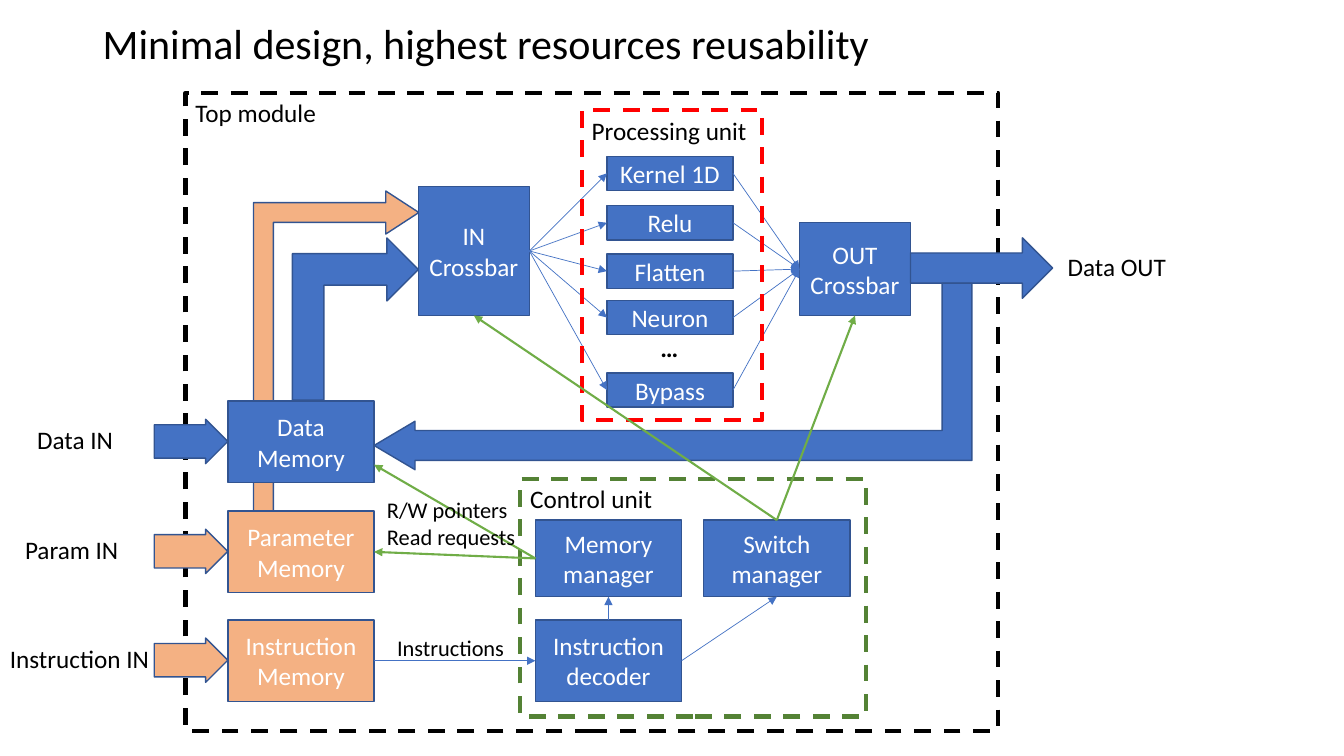
from lxml import etree
from pptx import Presentation
from pptx.dml.color import RGBColor
from pptx.enum.dml import MSO_LINE
from pptx.enum.shapes import MSO_CONNECTOR, MSO_SHAPE
from pptx.enum.text import MSO_ANCHOR, MSO_AUTO_SIZE, PP_ALIGN
from pptx.oxml.ns import qn
from pptx.util import Inches, Pt

BLUE, ORANGE, EDGE, GREEN = "4472C4", "F4B183", "325491", "70AD47"
BLACK, WHITE, RED, DARK_GREEN = "000000", "FFFFFF", "FF0000", "548235"
TOP, LEFT, BOTTOM, RIGHT = range(4)


def rgb(color):
    """Turn a hex string into a colour."""
    return RGBColor.from_string(color)


def write(tf, text, color, size=18, align=PP_ALIGN.LEFT, anchor=MSO_ANCHOR.TOP):
    """Put one formatted paragraph in a text frame and return it."""
    tf.word_wrap = True
    tf.vertical_anchor = anchor
    p = tf.paragraphs[0]
    p.text = text
    p.alignment = align
    p.font.size = Pt(size)
    p.font.name = "Calibri"
    p.font.color.rgb = rgb(color)
    return p


def add_shape(s, kind, box, fill, line=EDGE, width=1):
    """Add a preset shape without shadow."""
    sp = s.shapes.add_shape(kind, *map(Inches, box))
    sp.shadow.inherit = False
    if fill:
        sp.fill.solid()
        sp.fill.fore_color.rgb = rgb(fill)
    else:
        sp.fill.background()
    sp.line.color.rgb = rgb(line)
    sp.line.width = Pt(width)
    return sp


def add_block(s, text, box, fill=BLUE):
    """Add a filled module block with centred white text."""
    sp = add_shape(s, MSO_SHAPE.RECTANGLE, box, fill)
    write(sp.text_frame, text, WHITE, align=PP_ALIGN.CENTER, anchor=MSO_ANCHOR.MIDDLE)
    return sp


def add_frame(s, text, box, color):
    """Add a dashed frame around a group of modules."""
    sp = add_shape(s, MSO_SHAPE.RECTANGLE, box, None, color, 3)
    sp.line.dash_style = MSO_LINE.DASH
    write(sp.text_frame, text, BLACK)


def add_flow(s, kind, box, fill=BLUE, adjust=(), rotation=0):
    """Add a block arrow, mirrored when it is rotated."""
    sp = add_shape(s, kind, box, fill)
    for i, value in enumerate(adjust):
        sp.adjustments[i] = value
    if rotation:
        sp.rotation = rotation
        sp._element.spPr.find(qn("a:xfrm")).set("flipH", "1")


def add_label(s, text, box, size=18, align=PP_ALIGN.LEFT):
    """Add a black text label and return its paragraph."""
    tf = s.shapes.add_textbox(*map(Inches, box)).text_frame
    p = write(tf, text, BLACK, size, align)
    tf.auto_size = MSO_AUTO_SIZE.SHAPE_TO_FIT_TEXT
    return p


def add_link(s, start, site, target=None, target_site=LEFT, end=(0, 0), color=BLUE, width=0.5):
    """Join a block to another block, or to a free point, with an arrow."""
    c = s.shapes.add_connector(MSO_CONNECTOR.STRAIGHT, 0, 0, *map(Inches, end))
    c.begin_connect(start, site)
    if target is not None:
        c.end_connect(target, target_site)
    c.line.color.rgb = rgb(color)
    c.line.width = Pt(width)
    etree.SubElement(c.line._get_or_add_ln(), qn("a:tailEnd"), type="triangle")
    etree.SubElement(c._element.spPr, qn("a:effectLst"))


def add_memories(s):
    """Add the memory rows with their inputs and return the blocks."""
    rows = [
        ("Data", "Data IN", 3.98, 0.27, 1.42, BLUE),
        ("Parameter", "Param IN", 5.07, 0.15, 1.54, ORANGE),
        ("Instruction", "Instruction IN", 6.15, 0, 1.7, ORANGE),
    ]
    blocks = []
    for name, label, y, x, w, fill in rows:
        blocks.append(add_block(s, f"{name} Memory", (2.26, y, 1.45, 0.81), fill))
        add_flow(s, MSO_SHAPE.RIGHT_ARROW, (1.53, y + 0.18, 0.73, 0.44), fill, (0.75, 0.5))
        add_label(s, label, (x, y + 0.18, w, 0.4))
    return blocks


def add_processing(s):
    """Add the crossbars and the processing kernels between them."""
    crossbar_in = add_block(s, "IN Crossbar", (4.15, 1.85, 1.1, 1.28))
    crossbar_out = add_block(s, "OUT Crossbar", (7.93, 2.21, 1.1, 0.92))
    kernels = {"Kernel 1D": 1.55, "Relu": 2.04, "Flatten": 2.52, "Neuron": 2.98, "Bypass": 3.7}
    for name, y in kernels.items():
        kernel = add_block(s, name, (6.02, y, 1.25, 0.34))
        add_link(s, crossbar_in, RIGHT, kernel, LEFT)
        add_link(s, kernel, RIGHT, crossbar_out, LEFT)
    add_flow(s, MSO_SHAPE.RIGHT_ARROW, (9.03, 2.36, 1.41, 0.6))
    add_flow(s, MSO_SHAPE.BENT_UP_ARROW, (2.72, 2.54, 1.61, 1.25), rotation=90)
    add_flow(s, MSO_SHAPE.BENT_UP_ARROW, (5.75, 0.77, 1.85, 5.93), BLUE, (0.16, 0.13, 0.22), 270)
    add_label(s, "Data OUT", (10.49, 2.44, 1.42, 0.4))
    add_frame(s, "Processing unit", (5.77, 1.09, 1.79, 3.08), RED)
    add_label(s, "…", (6.02, 3.25, 1.24, 0.4), align=PP_ALIGN.CENTER).font.bold = True
    return crossbar_in, crossbar_out


def add_control(s, memories, crossbars):
    """Add the control unit and its links to memories and crossbars."""
    _, parameters, instructions = memories
    manager = add_block(s, "Memory manager", (5.31, 5.16, 1.45, 0.76))
    decoder = add_block(s, "Instruction decoder", (5.31, 6.15, 1.45, 0.81))
    add_frame(s, "Control unit", (5.16, 4.75, 3.43, 2.36), DARK_GREEN)
    switch = add_block(s, "Switch manager", (6.98, 5.16, 1.45, 0.76))
    add_link(s, instructions, RIGHT, decoder, LEFT)
    add_link(s, decoder, TOP, manager, BOTTOM)
    add_link(s, decoder, RIGHT, switch, BOTTOM)
    add_link(s, manager, LEFT, parameters, RIGHT, color=GREEN, width=1.5)
    add_link(s, manager, LEFT, end=(3.71, 4.61), color=GREEN, width=1.5)
    for crossbar in crossbars:
        add_link(s, switch, TOP, crossbar, BOTTOM, color=GREEN, width=1.5)
    add_label(s, "R/W pointers\vRead requests", (3.74, 4.87, 1.63, 0.64), 16)
    add_label(s, "Instructions", (3.84, 6.24, 1.63, 0.37), 16)


def main():
    """Build the slide and save it."""
    prs = Presentation()
    prs.slide_width, prs.slide_height = Inches(13.33), Inches(7.5)
    s = prs.slides.add_slide(prs.slide_layouts[6])
    add_flow(s, MSO_SHAPE.BENT_UP_ARROW, (1.71, 2.7, 3.25, 1.64), ORANGE, (0.12, 0.13, 0.2), 90)
    add_frame(s, "Top module", (1.84, 0.92, 8.06, 6.33), BLACK)
    title = s.shapes.add_textbox(*map(Inches, (0.92, 0, 11.5, 0.92)))
    p = write(title.text_frame, "Minimal design, highest resources reusability", BLACK, 30,
              anchor=MSO_ANCHOR.MIDDLE)
    p.line_spacing = 0.9
    memories = add_memories(s)
    crossbars = add_processing(s)
    add_control(s, memories, crossbars)
    prs.save("out.pptx")


if __name__ == "__main__":
    main()
